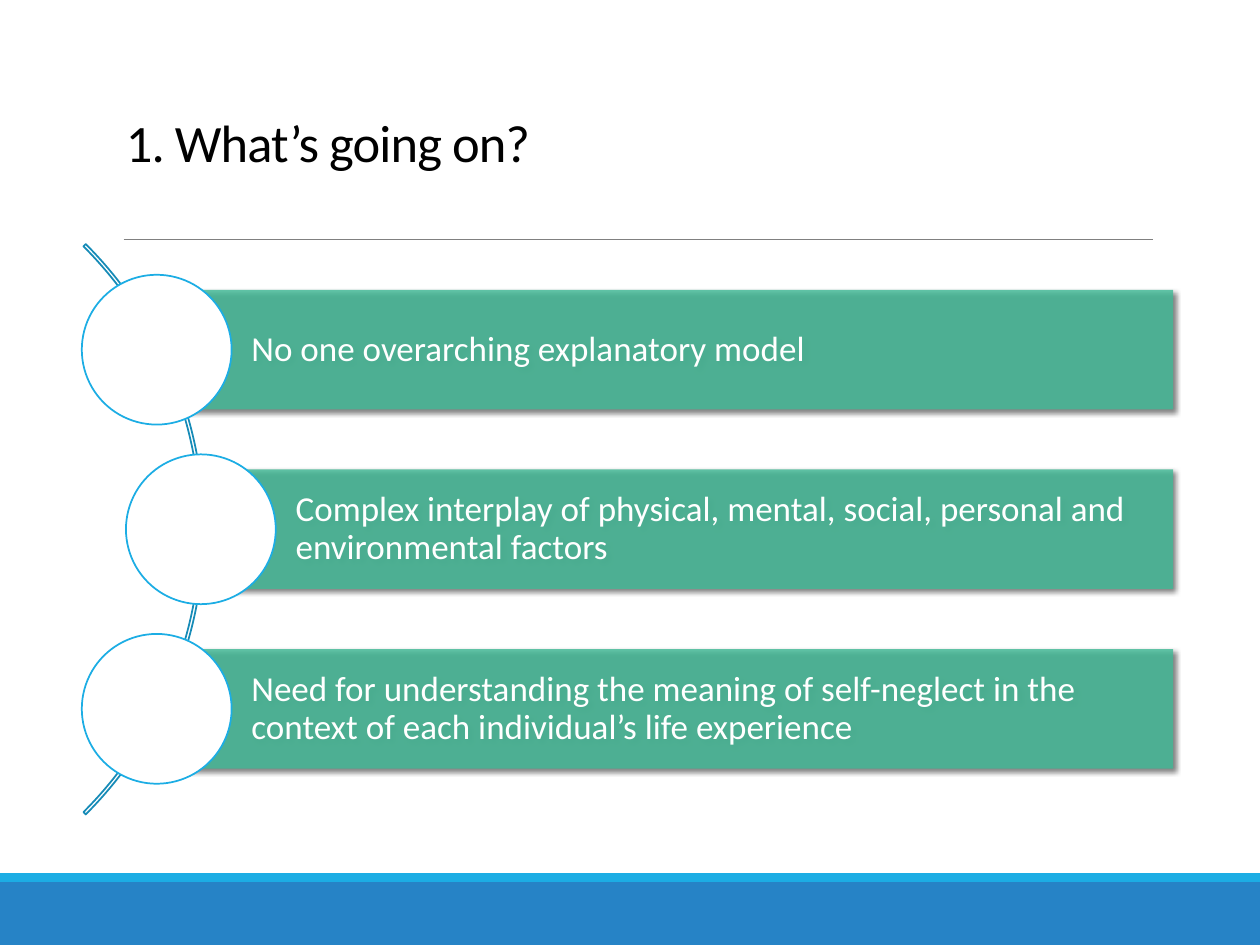
from lxml import etree
from pptx import Presentation
from pptx import util as u
from pptx.dml.color import RGBColor
from pptx.enum import shapes, text
from pptx.oxml import parse_xml
from pptx.oxml.ns import nsdecls, qn

TITLE = "1. What’s going on?"
# Statement and horizontal centre of its circle (cm)
POINTS = [
    ("No one overarching explanatory model", 3.16),
    ("Complex interplay of physical, mental, social, personal and "
     "environmental factors", 4.05),
    ("Need for understanding the meaning of self-neglect in the context of "
     "each individual’s life experience", 3.16),
]

FONT = "Calibri"
BLACK = RGBColor(0x00, 0x00, 0x00)
WHITE = RGBColor(0xFF, 0xFF, 0xFF)
GREY = RGBColor(0x80, 0x80, 0x80)
BLUE = RGBColor(0x26, 0x83, 0xC6)
SKY = RGBColor(0x1C, 0xAD, 0xE4)
ARC_BLUE = RGBColor(0x16, 0x8B, 0xB7)
GREEN = RGBColor(0x42, 0xBA, 0x97)

# Layout in cm
WIDTH, HEIGHT = 25.4, 19.05
FIRST_MIDDLE, PITCH = 7.05, 3.62
BAR_RIGHT, BAR_H = 23.65, 2.41
CIRCLE = 3.02
ARC = 16.26
ARC_RIGHT = 4.11

SHADOW = (f'<a:effectLst {nsdecls("a")}><a:outerShdw blurRad="38100" '
          'dist="25400" dir="2700000" algn="ctr" rotWithShape="0">'
          '<a:srgbClr val="000000"><a:alpha val="60000"/></a:srgbClr>'
          '</a:outerShdw></a:effectLst>')

prs = Presentation()
prs.slide_width, prs.slide_height = u.Cm(WIDTH), u.Cm(HEIGHT)
s = prs.slides.add_slide(prs.slide_layouts[6])


def add_shape(kind, x, y, w, h, fill=None, line=None):
    sp = s.shapes.add_shape(kind, u.Cm(x), u.Cm(y), u.Cm(w), u.Cm(h))
    sp.shadow.inherit = False
    if fill is None:
        sp.fill.background()
    else:
        sp.fill.solid()
        sp.fill.fore_color.rgb = fill
    if line is None:
        sp.line.fill.background()
    else:
        sp.line.color.rgb = line
        sp.line.width = u.Pt(1)
    return sp


def write(tf, words, size, color, anchor, spacing):
    tf.word_wrap = True
    tf.vertical_anchor = anchor
    p = tf.paragraphs[0]
    p.text = words
    p.alignment = text.PP_ALIGN.LEFT
    p.line_spacing = spacing
    p.font.name, p.font.size = FONT, u.Pt(size)
    p.font.color.rgb = color
    return p


# Footer bands
RECT = shapes.MSO_SHAPE.RECTANGLE
add_shape(RECT, 0, 17.78, WIDTH, 1.27, BLUE)
add_shape(RECT, 0, 17.6, WIDTH, 0.18, SKY)

# Rule under the title
rule = s.shapes.add_connector(shapes.MSO_CONNECTOR.STRAIGHT, u.Cm(2.49),
                              u.Cm(4.83), u.Cm(23.24), u.Cm(4.83))
rule.line.color.rgb = GREY
rule.line.width = u.Pt(0.5)
etree.SubElement(rule._element.spPr, qn("a:effectLst"))

# Title
box = s.shapes.add_textbox(u.Cm(2.29), u.Cm(0.79), u.Cm(20.96), u.Cm(2.82))
p = write(box.text_frame, TITLE, 30, BLACK, text.MSO_ANCHOR.BOTTOM, 0.85)
p.runs[0]._r.get_or_add_rPr().set("spc", "-50")

# Arc behind the circles, centred on the middle row
middle = FIRST_MIDDLE + PITCH
arc = add_shape(shapes.MSO_SHAPE.BLOCK_ARC, ARC_RIGHT - ARC, middle - ARC / 2,
                ARC, ARC, line=ARC_BLUE)
for i, value in enumerate((189, 27, 0.004)):
    arc.adjustments[i] = value

# Bars with their circles
for i, (words, x) in enumerate(POINTS):
    y = FIRST_MIDDLE + i * PITCH
    bar = add_shape(RECT, x, y - BAR_H / 2, BAR_RIGHT - x, BAR_H, GREEN)
    color = bar._element.spPr.find(qn("a:solidFill"))[0]
    etree.SubElement(color, qn("a:alpha"), val="82000")
    effects = bar._element.spPr.find(qn("a:effectLst"))
    effects.getparent().replace(effects, parse_xml(SHADOW))

    tf = bar.text_frame
    tf.margin_left = u.Cm(1.91)
    tf.margin_top = tf.margin_right = tf.margin_bottom = u.Cm(0.15)
    write(tf, words, 20, WHITE, text.MSO_ANCHOR.MIDDLE, 0.9)

    add_shape(shapes.MSO_SHAPE.OVAL, x - CIRCLE / 2, y - CIRCLE / 2,
              CIRCLE, CIRCLE, WHITE, SKY)

prs.save("out.pptx")
